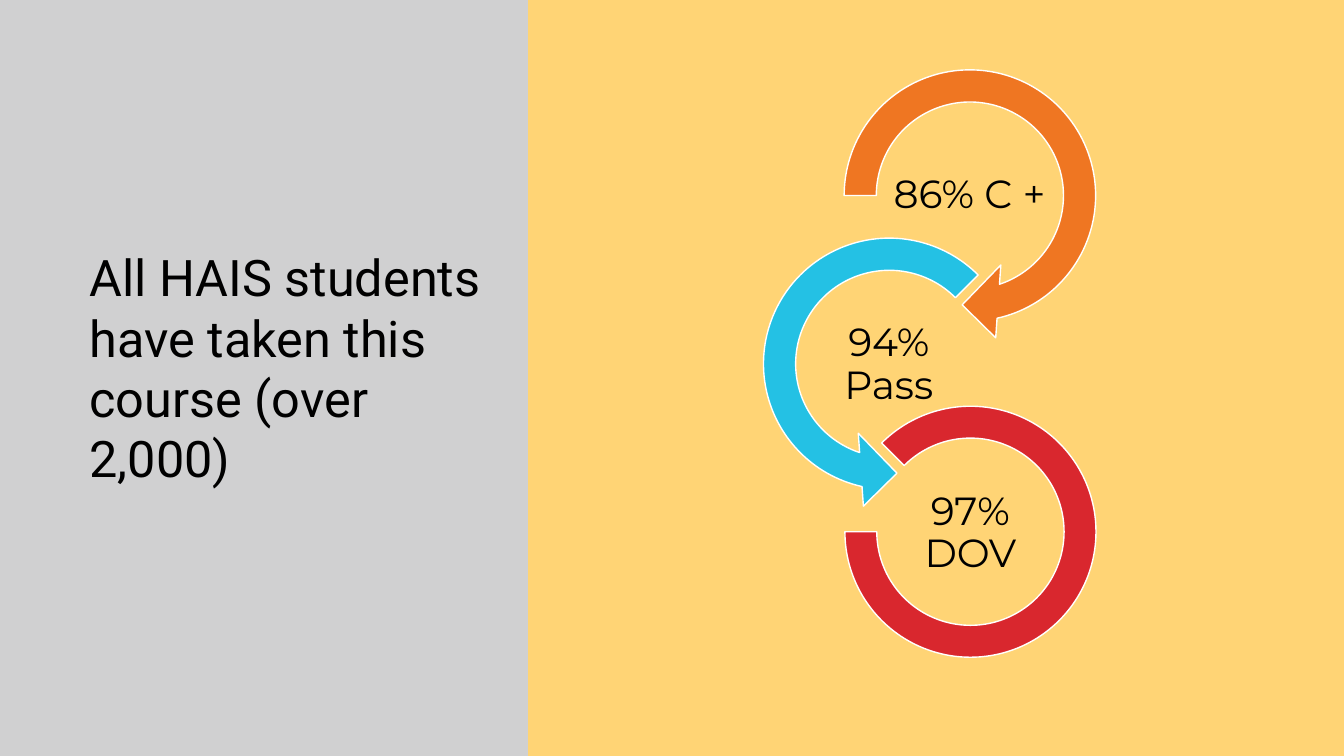
import pptx
import pptx.dml.color
import pptx.enum.shapes
import pptx.enum.text
import pptx.util
from dataclasses import dataclass

Inches = pptx.util.Inches
Pt = pptx.util.Pt
SHAPE = pptx.enum.shapes.MSO_SHAPE
ALIGN = pptx.enum.text.PP_ALIGN
ANCHOR = pptx.enum.text.MSO_ANCHOR
AUTO_SIZE = pptx.enum.text.MSO_AUTO_SIZE
rgb = pptx.dml.color.RGBColor.from_string


@dataclass(frozen=True)
class Theme:
    background: str = "FFD475"
    panel: str = "D0D0D1"
    outline: str = "FFFFFF"
    ink: str = "000000"
    orange: str = "EF7622"
    blue: str = "24C1E4"
    red: str = "D9272E"
    statement_font: str = "Roboto"
    result_font: str = "Montserrat"
    statement_size: int = 36
    result_size: int = 28


theme = Theme()
deck = pptx.Presentation()
deck.slide_width = Inches(13.33)
deck.slide_height = Inches(7.5)
slide = deck.slides.add_slide(deck.slide_layouts[6])
slide.background.fill.solid()
slide.background.fill.fore_color.rgb = rgb(theme.background)


def add_figure(kind, box, fill, line, adjustments=()):
    figure = slide.shapes.add_shape(kind, *map(Inches, box))
    figure.shadow.inherit = False
    figure.fill.solid()
    figure.fill.fore_color.rgb = rgb(fill)
    figure.line.color.rgb = rgb(line)
    figure.line.width = Pt(1)
    for index, value in enumerate(adjustments):
        figure.adjustments[index] = value


def add_text(text, box, *, font, size, spacing, align=ALIGN.LEFT,
             anchor=ANCHOR.TOP, inset=None, after=0, auto_size=AUTO_SIZE.NONE):
    frame = slide.shapes.add_textbox(*map(Inches, box)).text_frame
    frame.word_wrap = True
    frame.auto_size = auto_size
    frame.vertical_anchor = anchor
    if inset is not None:
        frame.margin_left = frame.margin_right = Inches(inset)
        frame.margin_top = frame.margin_bottom = Inches(inset)
    paragraph = frame.paragraphs[0]
    paragraph.alignment = align
    paragraph.line_spacing = spacing
    paragraph.space_after = Pt(after)
    run = paragraph.add_run()
    run.text = text
    run.font.name = font
    run.font.size = Pt(size)
    run.font.color.rgb = rgb(theme.ink)


# Course results, linked from top to bottom
results = [
    ("86% C +", (8.81, 1.54), SHAPE.CIRCULAR_ARROW, (8.17, 0.49, 2.9, 2.9),
     theme.orange, (0.11, 11.42, 45, 108, 0.125)),
    ("94% Pass", (8.01, 3.22), SHAPE.LEFT_CIRCULAR_ARROW, (7.37, 2.16, 2.9, 2.9),
     theme.blue, (0.11, 11.42, 63, 189, 0.125)),
    ("97% DOV", (8.82, 4.89), SHAPE.BLOCK_ARC, (8.38, 4.03, 2.49, 2.49),
     theme.red, (135, 108, 0.127)),
]
for result, corner, ring, ring_box, color, adjustments in results:
    add_figure(ring, ring_box, color, theme.outline, adjustments)
    add_text(result, (*corner, 1.61, 0.81), font=theme.result_font,
             size=theme.result_size, spacing=0.9, align=ALIGN.CENTER,
             anchor=ANCHOR.MIDDLE, inset=0.02)

# Statement on the left panel
add_figure(SHAPE.RECTANGLE, (0, 0, 5.23, 7.5), theme.panel, theme.panel)
add_text("All HAIS students have taken this course (over 2,000)",
         (0.79, 2.4, 4.44, 2.6), font=theme.statement_font,
         size=theme.statement_size, spacing=Pt(43), after=6,
         auto_size=AUTO_SIZE.SHAPE_TO_FIT_TEXT)

deck.save("out.pptx")
